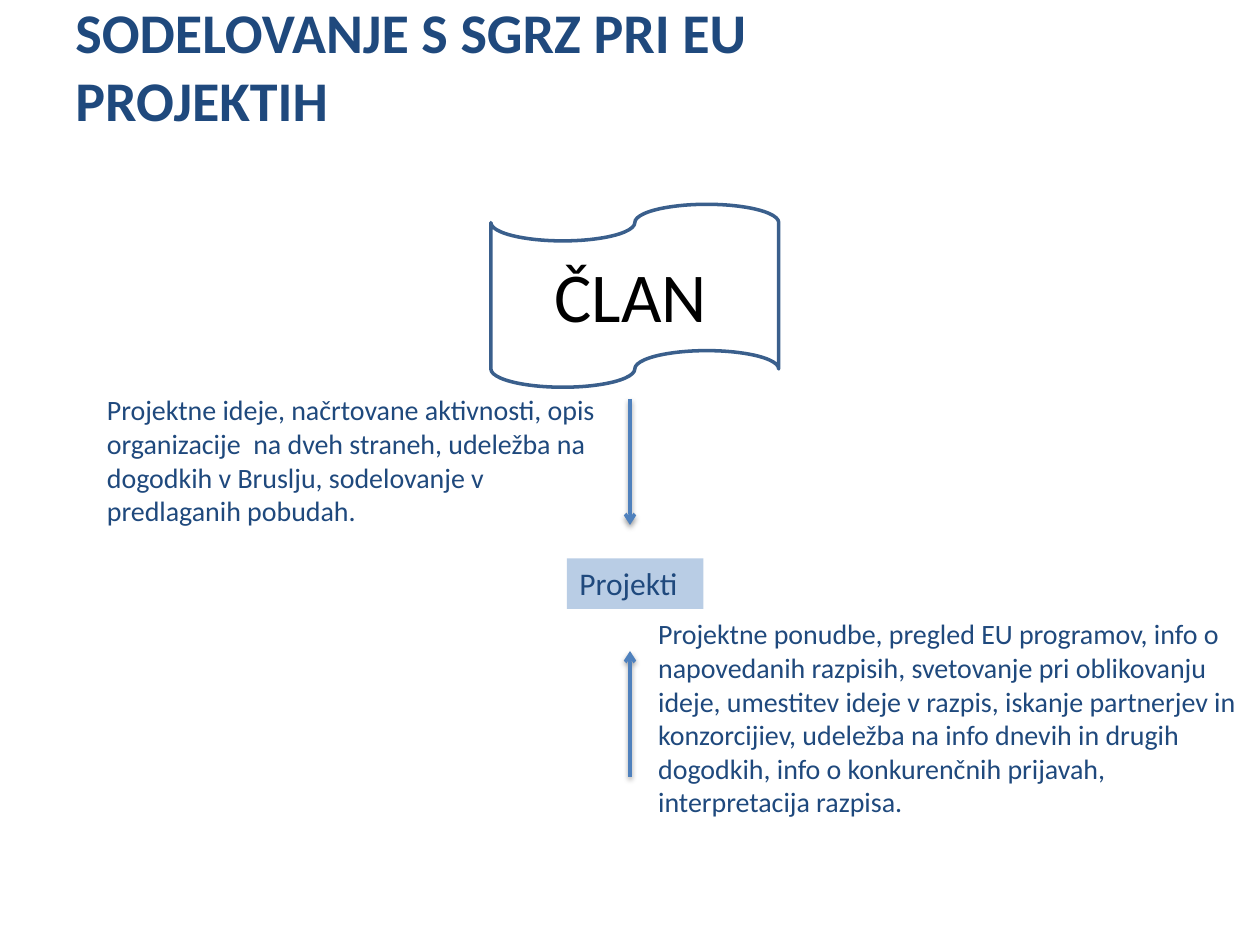
from dataclasses import dataclass

import pptx
import pptx.dml.color
import pptx.enum.shapes
import pptx.enum.text
import pptx.oxml
import pptx.oxml.ns
import pptx.slide
import pptx.text.text
import pptx.util

Pt = pptx.util.Pt
COLORS = {
    "navy": "1F497D",
    "arrow": "4F81BD",
    "outline": "3A5F8C",
    "pale": "B9CDE5",
    "black": "000000",
}
FONT = "Calibri"
ARROW_X = 360
ARROW_WIDTH = 2


@dataclass
class Label:
    text: str
    left: float
    top: float
    width: float
    height: float
    size: float
    color: str = "navy"
    fill: str = ""
    bold: bool = False
    centered: bool = False
    middle: bool = False


@dataclass
class Arrow:
    start_y: float
    end_y: float


LABELS = [
    Label("SODELOVANJE S SGRZ PRI EU PROJEKTIH", 36, 12.25, 546, 50, 32,
          bold=True, middle=True),
    Label("Projektne ideje, načrtovane aktivnosti, opis organizacije  na dveh "
          "straneh, udeležba na dogodkih v Bruslju, sodelovanje v predlaganih "
          "pobudah.", 54, 221, 306, 85, 16),
    Label("Projektne ponudbe, pregled EU programov, info o napovedanih razpisih, "
          "svetovanje pri oblikovanju ideje, umestitev ideje v razpis, iskanje "
          "partnerjev in konzorcijiev, udeležba na info dnevih in drugih dogodkih, "
          "info o konkurenčnih prijavah, interpretacija razpisa.",
          369, 349, 348, 124, 16),
    Label("Projekti", 324, 319, 78, 29, 18, fill="pale"),
    Label("ČLAN", 298, 141, 125, 55.5, 40, color="black", centered=True),
]
ARROWS = [Arrow(444, 372), Arrow(228, 300)]


def rgb(name: str) -> pptx.dml.color.RGBColor:
    return pptx.dml.color.RGBColor.from_string(COLORS[name])


def draw_label(slide: pptx.slide.Slide, label: Label) -> None:
    box = slide.shapes.add_textbox(
        Pt(label.left), Pt(label.top), Pt(label.width), Pt(label.height))
    if label.fill:
        box.fill.solid()
        box.fill.fore_color.rgb = rgb(label.fill)
    frame = box.text_frame
    frame.word_wrap = True
    if label.middle:
        frame.vertical_anchor = pptx.enum.text.MSO_ANCHOR.MIDDLE
    else:
        frame.auto_size = pptx.enum.text.MSO_AUTO_SIZE.SHAPE_TO_FIT_TEXT
    frame.text = label.text
    paragraph = frame.paragraphs[0]
    if label.centered:
        paragraph.alignment = pptx.enum.text.PP_ALIGN.CENTER
    font = paragraph.runs[0].font
    font.name = FONT
    font.size = Pt(label.size)
    font.bold = label.bold
    font.color.rgb = rgb(label.color)


def draw_arrow(slide: pptx.slide.Slide, arrow: Arrow) -> None:
    connector = slide.shapes.add_connector(
        pptx.enum.shapes.MSO_CONNECTOR.STRAIGHT,
        Pt(ARROW_X), Pt(arrow.start_y), Pt(ARROW_X), Pt(arrow.end_y))
    connector.line.color.rgb = rgb("arrow")
    connector.line.width = Pt(ARROW_WIDTH)
    namespace = pptx.oxml.ns.nsdecls("a")
    connector.line._get_or_add_ln().append(
        pptx.oxml.parse_xml(f'<a:tailEnd {namespace} type="arrow"/>'))
    connector._element.spPr.append(pptx.oxml.parse_xml(
        f'<a:effectLst {namespace}>'
        f'<a:outerShdw blurRad="{Pt(3.1)}" dist="{Pt(1.6)}" dir="5400000" '
        f'rotWithShape="0"><a:srgbClr val="{COLORS["black"]}">'
        '<a:alpha val="38000"/></a:srgbClr></a:outerShdw></a:effectLst>'))


def draw_member_tape(slide: pptx.slide.Slide) -> None:
    tape = slide.shapes.add_shape(
        pptx.enum.shapes.MSO_SHAPE.FLOWCHART_PUNCHED_TAPE,
        Pt(280.5), Pt(116.75), Pt(164.5), Pt(104.5))
    tape.shadow.inherit = False
    tape.fill.background()
    tape.line.color.rgb = rgb("outline")
    tape.line.width = Pt(2)


def main() -> None:
    presentation = pptx.Presentation()
    presentation.slide_width = Pt(720)
    presentation.slide_height = Pt(540)
    slide = presentation.slides.add_slide(presentation.slide_layouts[6])
    for arrow in ARROWS:
        draw_arrow(slide, arrow)
    draw_member_tape(slide)
    for label in LABELS:
        draw_label(slide, label)
    presentation.save("out.pptx")


if __name__ == "__main__":
    main()
